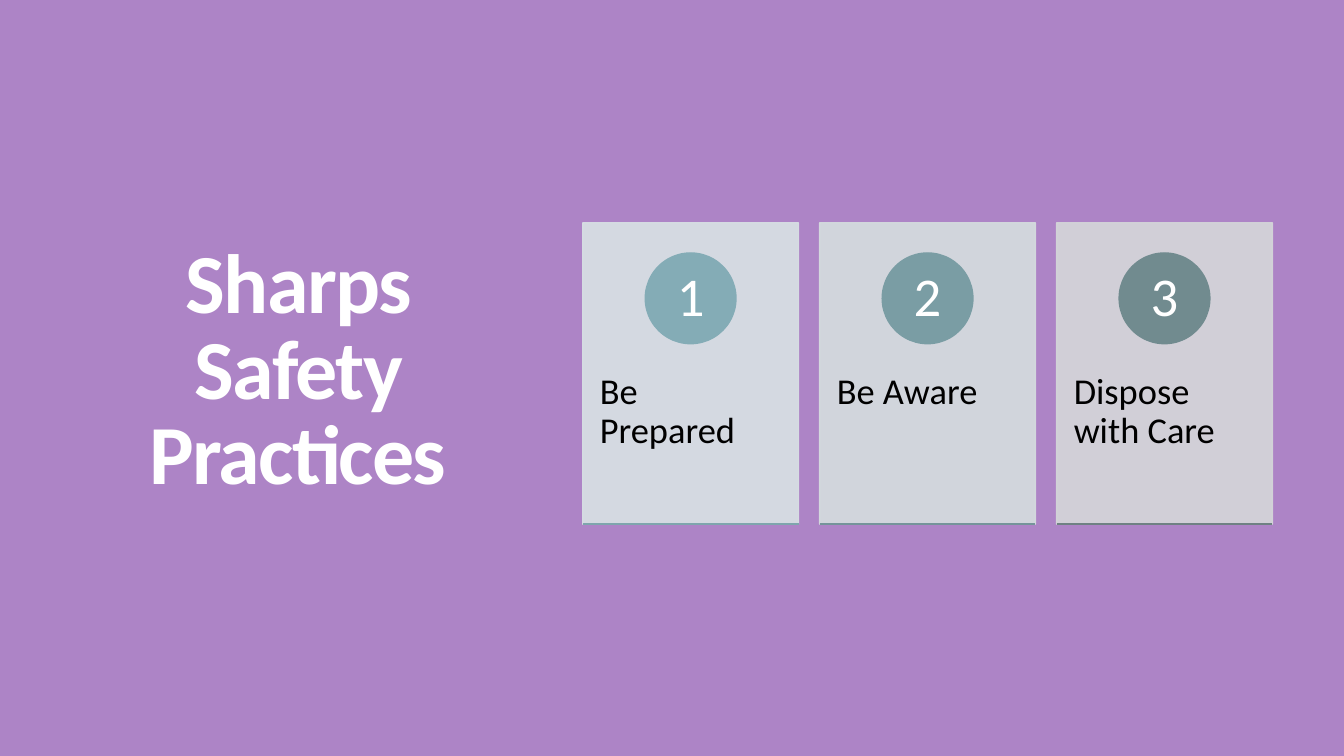
from dataclasses import dataclass

from lxml import etree
from pptx import Presentation
from pptx.dml.color import RGBColor
from pptx.enum.shapes import MSO_CONNECTOR, MSO_SHAPE
from pptx.enum.text import MSO_ANCHOR, MSO_AUTO_SIZE, PP_ALIGN
from pptx.oxml.ns import qn
from pptx.util import Inches, Pt

RECTANGLE, OVAL = MSO_SHAPE.RECTANGLE, MSO_SHAPE.OVAL
STRAIGHT = MSO_CONNECTOR.STRAIGHT
TOP, MIDDLE = MSO_ANCHOR.TOP, MSO_ANCHOR.MIDDLE
LEFT, CENTER = PP_ALIGN.LEFT, PP_ALIGN.CENTER
NO_AUTOFIT = MSO_AUTO_SIZE.NONE


@dataclass(frozen=True)
class Theme:
    font: str = "Calibri"
    background: str = "AD84C6"
    light: str = "FFFFFF"
    dark: str = "000000"
    title_size: int = 60
    number_size: int = 39
    label_size: int = 26
    line_width: int = 1
    card_opacity: int = 90


# Label, card colour, circle colour, base line colour
PRACTICES = [
    ("Be Prepared", "D9E3E5", "84ACB6", "7FA5AD"),
    ("Be Aware", "D6DEDF", "7A9DA4", "75949A"),
    ("Dispose with Care", "D5D8D9", "718B8F", "6F8183"),
]

# Card geometry in inches
CARD_LEFT, CARD_TOP = 5.78, 2.21
CARD_WIDTH, CARD_HEIGHT = 2.14, 2.99
CARD_GAP = 0.21
CIRCLE_TOP, CIRCLE_SIZE = 2.51, 0.9
NUMBER_SIZE = 0.63
LABEL_TOP, LABEL_HEIGHT = 3.34, 1.8


class SlideBuilder:
    def __init__(self, slide, theme):
        self.slide = slide
        self.theme = theme

    def background(self):
        fill = self.slide.background.fill
        fill.solid()
        fill.fore_color.rgb = RGBColor.from_string(self.theme.background)

    def set_text(self, frame, text, size, color, align, anchor, spacing, bold=False):
        frame.text = text
        frame.word_wrap = True
        frame.auto_size = NO_AUTOFIT
        frame.vertical_anchor = anchor
        paragraph = frame.paragraphs[0]
        paragraph.alignment = align
        paragraph.line_spacing = spacing
        font = paragraph.runs[0].font
        font.name, font.size, font.bold = self.theme.font, Pt(size), bold
        font.color.rgb = RGBColor.from_string(color)

    def title(self, text, left, top, width, height):
        title = self.slide.shapes.title
        title.left, title.top = Inches(left), Inches(top)
        title.width, title.height = Inches(width), Inches(height)
        self.set_text(title.text_frame, text, self.theme.title_size,
                      self.theme.light, CENTER, MIDDLE, 0.85, bold=True)
        for properties in title._element.iter(qn("a:rPr")):
            properties.set("spc", "-120")

    def shape(self, preset, left, top, width, height, color, opacity=100):
        shape = self.slide.shapes.add_shape(
            preset, Inches(left), Inches(top), Inches(width), Inches(height))
        shape.shadow.inherit = False
        shape.fill.solid()
        shape.fill.fore_color.rgb = RGBColor.from_string(color)
        shape.line.color.rgb = RGBColor.from_string(color)
        shape.line.width = Pt(self.theme.line_width)
        if opacity < 100:
            for tint in shape._element.spPr.iter(qn("a:srgbClr")):
                etree.SubElement(tint, qn("a:alpha")).set("val", str(opacity * 1000))

    def text(self, text, left, top, width, height, inset, size, color,
             align=LEFT, anchor=TOP):
        box = self.slide.shapes.add_textbox(
            Inches(left), Inches(top), Inches(width), Inches(height))
        frame = box.text_frame
        frame.margin_left = frame.margin_right = Inches(inset[0])
        frame.margin_top = frame.margin_bottom = Inches(inset[1])
        self.set_text(frame, text, size, color, align, anchor, 0.9)

    def base_line(self, left, top, width, color):
        line = self.slide.shapes.add_connector(
            STRAIGHT, Inches(left), Inches(top), Inches(left + width), Inches(top))
        line.line.color.rgb = RGBColor.from_string(color)
        line.line.width = Pt(self.theme.line_width)
        etree.SubElement(line._element.spPr, qn("a:effectLst"))

    def card(self, number, left, label, card_color, circle_color, line_color):
        theme = self.theme
        center = left + CARD_WIDTH / 2
        number_top = CIRCLE_TOP + (CIRCLE_SIZE - NUMBER_SIZE) / 2
        self.shape(RECTANGLE, left, CARD_TOP, CARD_WIDTH, CARD_HEIGHT,
                   card_color, theme.card_opacity)
        self.text(label, left, LABEL_TOP, CARD_WIDTH, LABEL_HEIGHT,
                  (0.17, 0.36), theme.label_size, theme.dark)
        self.shape(OVAL, center - CIRCLE_SIZE / 2, CIRCLE_TOP,
                   CIRCLE_SIZE, CIRCLE_SIZE, circle_color)
        self.text(str(number), center - NUMBER_SIZE / 2, number_top,
                  NUMBER_SIZE, NUMBER_SIZE, (0.07, 0.01),
                  theme.number_size, theme.light, CENTER, MIDDLE)
        self.base_line(left, CARD_TOP + CARD_HEIGHT, CARD_WIDTH, line_color)


def main():
    presentation = Presentation()
    presentation.slide_width = Inches(13.33)
    presentation.slide_height = Inches(7.5)
    title_only = presentation.slide_layouts[5]
    builder = SlideBuilder(presentation.slides.add_slide(title_only), Theme())

    # Background and title
    builder.background()
    builder.title("Sharps Safety Practices", 0.77, 0.7, 4.37, 6.01)

    # Numbered practice cards
    for index, practice in enumerate(PRACTICES):
        left = CARD_LEFT + index * (CARD_WIDTH + CARD_GAP)
        builder.card(index + 1, left, *practice)

    presentation.save("out.pptx")


if __name__ == "__main__":
    main()
